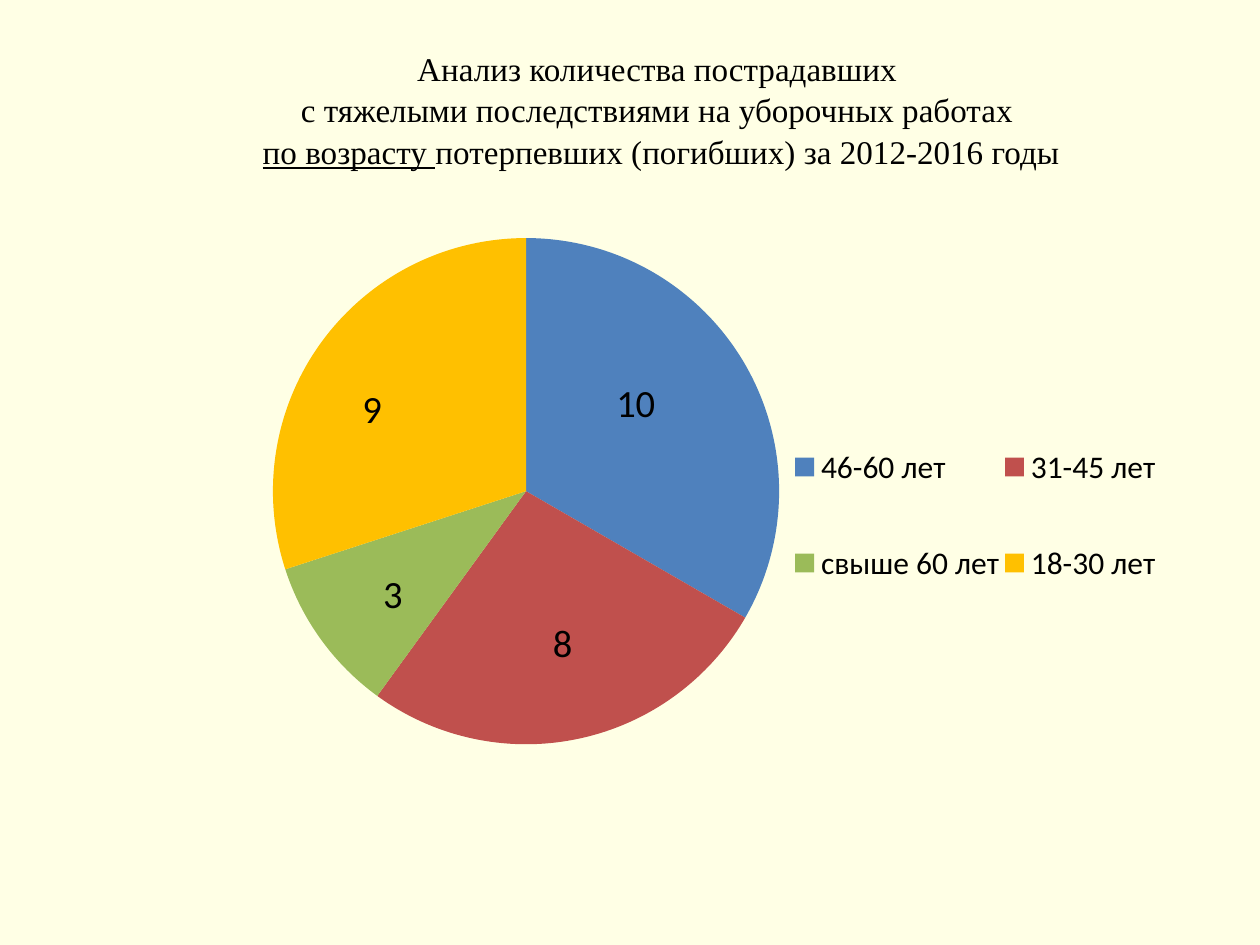
from lxml import etree
from pptx import Presentation
from pptx.chart.data import CategoryChartData
from pptx.dml.color import RGBColor
from pptx.enum.chart import XL_CHART_TYPE, XL_LABEL_POSITION, XL_LEGEND_POSITION
from pptx.enum.text import MSO_ANCHOR, PP_ALIGN
from pptx.oxml.ns import qn
from pptx.util import Inches, Pt

PIE = XL_CHART_TYPE.PIE
RIGHT = XL_LEGEND_POSITION.RIGHT
LABEL_CENTER = XL_LABEL_POSITION.CENTER
CENTER = PP_ALIGN.CENTER
MIDDLE = MSO_ANCHOR.MIDDLE

W, H = Inches(10), Inches(7.5)
TITLE_BOX = (0.14, 0.04, 0.77, 0.15)
CHART_BOX = (0.11, 0.23, 0.82, 0.63)
COLORS = {
    "background": "FFFFE5",
    "text": "000000",
    "46-60 лет": "4F81BD",
    "31-45 лет": "C0504D",
    "свыше 60 лет": "9BBB59",
    "18-30 лет": "FFC000",
}
TITLE_LINES = [
    [("Анализ количества пострадавших ", False)],
    [("с тяжелыми последствиями на уборочных работах ", False)],
    [("по возрасту ", True), ("потерпевших (погибших) за 2012-2016 годы", False)],
]
VICTIMS = {"46-60 лет": 10, "31-45 лет": 8, "свыше 60 лет": 3, "18-30 лет": 9}
LABEL_SHIFTS = [(0, -0.04), (0.01, 0.05), (-0.03, 0.05), (-0.05, -0.01)]


def color(name):
    return RGBColor.from_string(COLORS[name])


def place(box):
    x, y, w, h = box
    return int(x * W), int(y * H), int(w * W), int(h * H)


def style(font, name, size):
    font.name = name
    font.size = Pt(size)
    font.color.rgb = color("text")


def manual_layout(**values):
    layout = etree.Element(qn("c:layout"))
    manual = etree.SubElement(layout, qn("c:manualLayout"))
    for tag, value in values.items():
        etree.SubElement(manual, qn("c:" + tag)).set("val", str(value))
    return layout


def set_layout(parent, after, layout):
    for old in parent.findall(qn("c:layout")):
        parent.remove(old)
    if after is None:
        parent.insert(0, layout)
    else:
        parent.find(qn(after)).addnext(layout)


def add_title(s, box):
    tf = s.shapes.add_textbox(*place(box)).text_frame
    tf.word_wrap = True
    tf.vertical_anchor = MIDDLE
    p = tf.paragraphs[0]
    p.alignment = CENTER
    p.line_spacing = 1.05
    for i, line in enumerate(TITLE_LINES):
        if i:
            p.add_line_break()
        for text, underlined in line:
            r = p.add_run()
            r.text = text
            r.font.underline = underlined
            style(r.font, "Times New Roman", 18.9)


def add_age_chart(s, box):
    data = CategoryChartData()
    data.categories = list(VICTIMS)
    data.add_series("Series 1", list(VICTIMS.values()))
    chart = s.shapes.add_chart(PIE, *place(box), data).chart
    style(chart.font, "Calibri", 18)
    chart.has_title = False
    chart.has_legend = True
    chart.legend.position = RIGHT
    chart.legend.include_in_layout = False

    plot = chart.plots[0]
    plot.vary_by_categories = True
    plot.has_data_labels = True
    plot.data_labels.show_value = True
    plot.data_labels.show_percentage = False
    points = plot.series[0].points
    for i, age in enumerate(VICTIMS):
        fill = points[i].format.fill
        fill.solid()
        fill.fore_color.rgb = color(age)
        label = points[i].data_label
        style(label.font, "Calibri", 22)
        label.position = LABEL_CENTER

    root = chart.element
    for label, (x, y) in zip(root.iter(qn("c:dLbl")), LABEL_SHIFTS):
        set_layout(label, "c:idx", manual_layout(x=x, y=y))
    area = next(root.iter(qn("c:plotArea")))
    set_layout(area, None, manual_layout(
        layoutTarget="inner", xMode="edge", yMode="edge",
        x=0.13, y=0.03, w=0.49, h=0.86))
    legend = next(root.iter(qn("c:legend")))
    set_layout(legend, "c:legendPos", manual_layout(
        xMode="edge", yMode="edge", x=0.63, y=0.29, w=0.36, h=0.42))


def main():
    prs = Presentation()
    prs.slide_width, prs.slide_height = W, H
    s = prs.slides.add_slide(prs.slide_layouts[6])
    s.background.fill.solid()
    s.background.fill.fore_color.rgb = color("background")
    add_title(s, TITLE_BOX)
    add_age_chart(s, CHART_BOX)
    prs.save("out.pptx")


if __name__ == "__main__":
    main()
